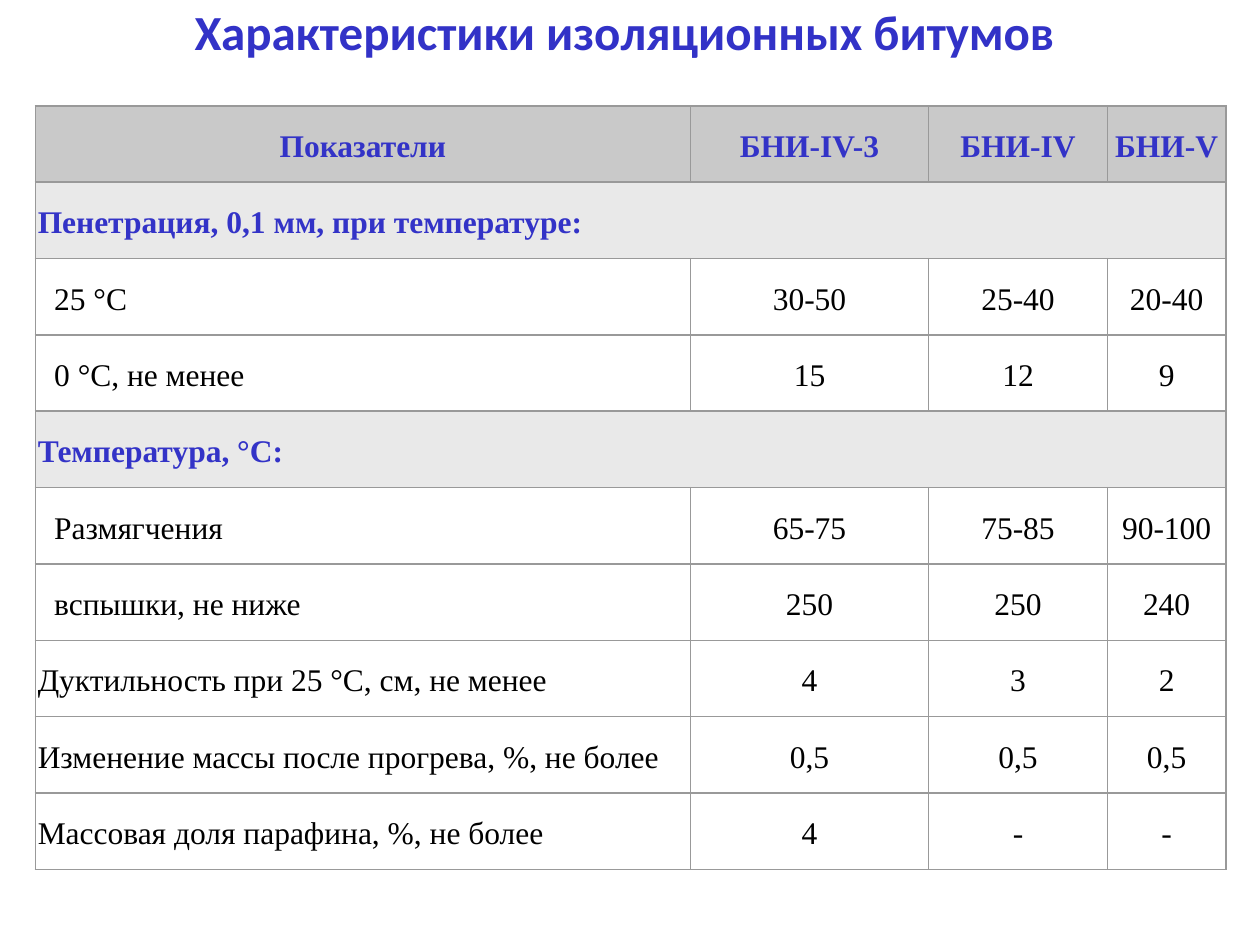
from dataclasses import dataclass

from lxml import etree
from pptx import Presentation
from pptx.dml.color import RGBColor
from pptx.enum.text import MSO_ANCHOR, MSO_AUTO_SIZE, PP_ALIGN
from pptx.oxml.ns import qn
from pptx.slide import Slide
from pptx.table import Table, _Cell
from pptx.util import Inches, Pt

CENTER, LEFT = PP_ALIGN.CENTER, PP_ALIGN.LEFT
MIDDLE = MSO_ANCHOR.MIDDLE
NO_AUTOFIT = MSO_AUTO_SIZE.NONE
TITLE_ONLY_LAYOUT = 5


@dataclass(frozen=True)
class Theme:
    title_color: str = "3232C7"
    heading_color: str = "3333C7"
    text_color: str = "000000"
    header_fill: str = "C9C9C9"
    section_fill: str = "E9E9E9"
    border_color: str = "999999"
    title_font: str = "Calibri"
    table_font: str = "Times New Roman"
    title_size: int = 28
    table_size: int = 18
    border_width: int = 1
    line_spacing: float = 1.15


@dataclass(frozen=True)
class Row:
    label: str
    values: tuple[str, ...] = ()
    indented: bool = False


THEME = Theme()
TITLE = "Характеристики изоляционных битумов"
HEADER = Row("Показатели", ("БНИ-IV-3", "БНИ-IV", "БНИ-V"))
ROWS = (
    Row("Пенетрация, 0,1 мм, при температуре:"),
    Row("25 °С", ("30-50", "25-40", "20-40"), indented=True),
    Row("0 °С, не менее", ("15", "12", "9"), indented=True),
    Row("Температура, °С:"),
    Row("Размягчения", ("65-75", "75-85", "90-100"), indented=True),
    Row("вспышки, не ниже", ("250", "250", "240"), indented=True),
    Row("Дуктильность при 25 °С, см, не менее", ("4", "3", "2")),
    Row("Изменение массы после прогрева, %, не более", ("0,5", "0,5", "0,5")),
    Row("Массовая доля парафина, %, не более", ("4", "-", "-")),
)
COLUMN_WIDTHS = (5.2, 1.89, 1.42, 0.94)
TABLE_LEFT, TABLE_TOP, TABLE_HEIGHT = 0.28, 0.84, 6.06
CELL_MARGIN, LABEL_INDENT = 0.02, 0.13


def add_title(slide: Slide) -> None:
    title = slide.shapes.title
    title.left, title.top = Inches(1.36), Inches(-0.04)
    title.width, title.height = Inches(7.19), Inches(0.57)
    frame = title.text_frame
    frame.text = TITLE
    frame.word_wrap = False
    frame.auto_size = NO_AUTOFIT
    frame.vertical_anchor = MIDDLE
    paragraph = frame.paragraphs[0]
    paragraph.alignment = CENTER
    font = paragraph.font
    font.name, font.size, font.bold = THEME.title_font, Pt(THEME.title_size), True
    font.color.rgb = RGBColor.from_string(THEME.title_color)


def set_borders(cell: _Cell) -> None:
    """Line all four sides; lines must precede the fill in the cell properties."""
    properties = cell._tc.get_or_add_tcPr()
    for position, side in enumerate(("a:lnL", "a:lnR", "a:lnT", "a:lnB")):
        line = etree.Element(qn(side), w=str(Pt(THEME.border_width)))
        fill = etree.SubElement(line, qn("a:solidFill"))
        etree.SubElement(fill, qn("a:srgbClr"), val=THEME.border_color)
        properties.insert(position, line)


def write_cell(cell: _Cell, text: str, alignment: PP_ALIGN, heading: bool,
               indent: float = 0) -> None:
    cell.text = text
    cell.vertical_anchor = MIDDLE
    cell.margin_left = Inches(CELL_MARGIN + indent)
    cell.margin_right = cell.margin_top = cell.margin_bottom = Inches(CELL_MARGIN)
    paragraph = cell.text_frame.paragraphs[0]
    paragraph.alignment = alignment
    paragraph.line_spacing = THEME.line_spacing
    font = paragraph.font
    font.name, font.size, font.bold = THEME.table_font, Pt(THEME.table_size), heading
    color = THEME.heading_color if heading else THEME.text_color
    font.color.rgb = RGBColor.from_string(color)


def write_row(table: Table, index: int, row: Row) -> None:
    """Write a header, a section (a row without values) or a data row."""
    is_header, is_section = row is HEADER, not row.values
    cells = [table.cell(index, column) for column in range(len(COLUMN_WIDTHS))]
    for cell in cells:
        if is_header or is_section:
            cell.fill.solid()
            color = THEME.header_fill if is_header else THEME.section_fill
            cell.fill.fore_color.rgb = RGBColor.from_string(color)
        else:
            cell.fill.background()
        set_borders(cell)
    if is_section:
        cells[0].merge(cells[-1])
    write_cell(cells[0], row.label, CENTER if is_header else LEFT,
               is_header or is_section, LABEL_INDENT if row.indented else 0)
    for cell, value in zip(cells[1:], row.values):
        write_cell(cell, value, CENTER, is_header)


def add_properties_table(slide: Slide) -> None:
    rows = (HEADER, *ROWS)
    table = slide.shapes.add_table(
        len(rows), len(COLUMN_WIDTHS), Inches(TABLE_LEFT), Inches(TABLE_TOP),
        Inches(sum(COLUMN_WIDTHS)), Inches(TABLE_HEIGHT)).table
    table.first_row = table.horz_banding = False
    for column, width in zip(table.columns, COLUMN_WIDTHS):
        column.width = Inches(width)
    for index, row in enumerate(rows):
        write_row(table, index, row)


def main() -> None:
    presentation = Presentation()
    presentation.slide_width, presentation.slide_height = Inches(10), Inches(7.5)
    slide = presentation.slides.add_slide(presentation.slide_layouts[TITLE_ONLY_LAYOUT])
    add_title(slide)
    add_properties_table(slide)
    presentation.save("out.pptx")


if __name__ == "__main__":
    main()
